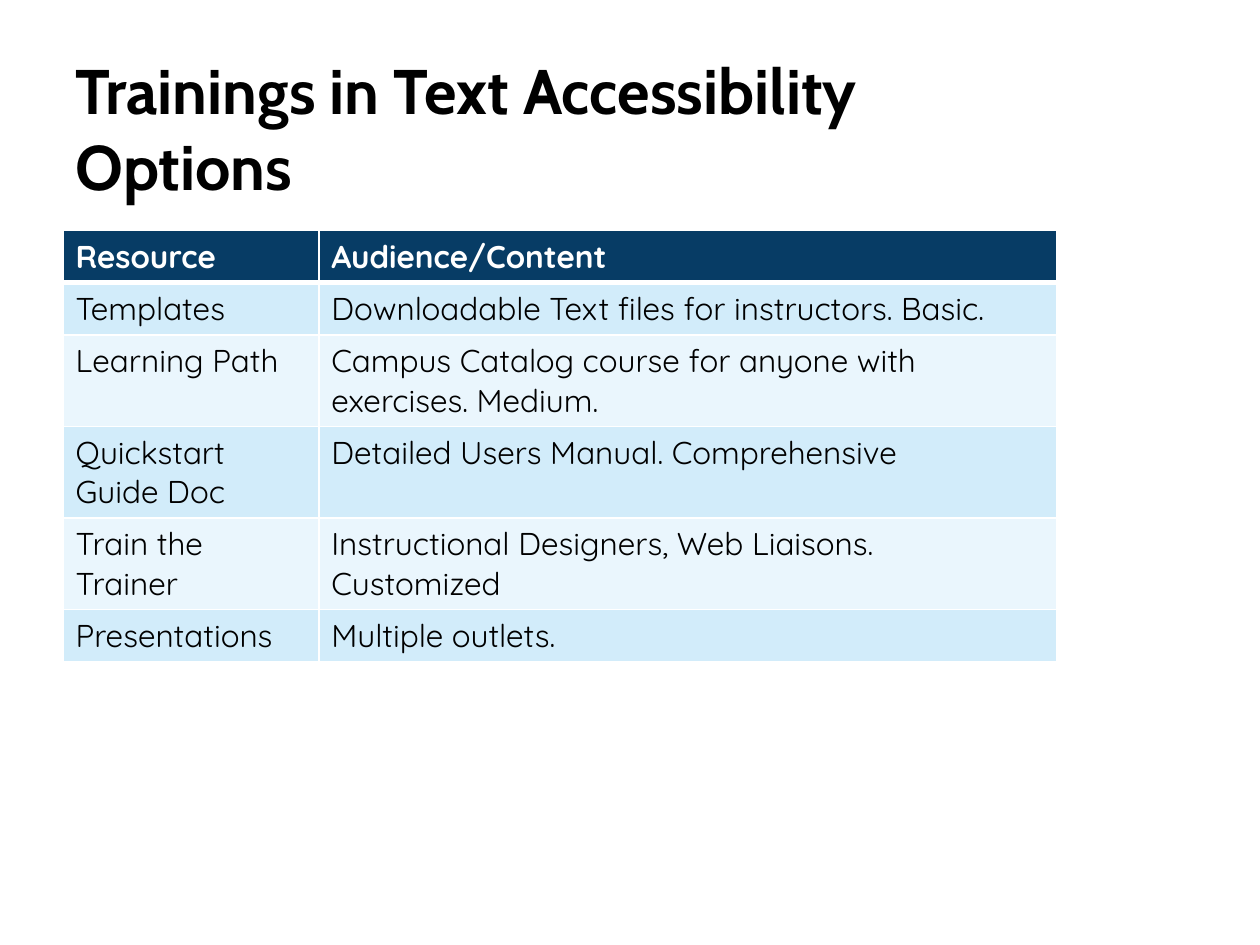
from dataclasses import dataclass

from lxml import etree
from pptx import Presentation
from pptx.dml.color import RGBColor
from pptx.enum import text
from pptx.oxml import ns
from pptx.util import Inches, Pt


@dataclass(frozen=True)
class Theme:
    head: str = "Cabin"
    body: str = "Quicksand"
    big: int = 36
    small: int = 18
    ink: str = "000000"
    white: str = "FFFFFF"
    navy: str = "073C65"
    bands: tuple = ("D2ECFA", "EAF6FD")
    thin: int = 1
    thick: int = 3


class Deck:
    def __init__(self, theme):
        self.theme = theme
        self.prs = Presentation()
        self.prs.slide_width, self.prs.slide_height = Inches(10), Inches(7.5)
        self.slide = self.prs.slides.add_slide(self.prs.slide_layouts[5])

    def style(self, para, face, size, color, bold):
        font = para.font
        font.name, font.size, font.bold = face, Pt(size), bold
        font.color.rgb = RGBColor.from_string(color)
        para.alignment = text.PP_ALIGN.LEFT

    def title(self, words, left, top, width, height):
        box = self.slide.shapes.title
        box.left, box.top = Inches(left), Inches(top)
        box.width, box.height = Inches(width), Inches(height)
        frame = box.text_frame
        frame.text = words
        frame.auto_size = text.MSO_AUTO_SIZE.NONE
        frame.vertical_anchor = text.MSO_ANCHOR.BOTTOM
        t = self.theme
        self.style(frame.paragraphs[0], t.head, t.big, t.ink, True)

    def border(self, cell, side, width):
        # Cell borders come before the fill in the cell properties
        props = cell._tc.get_or_add_tcPr()
        line = etree.SubElement(props, ns.qn(f"a:{side}"), w=str(Pt(width)))
        fill = etree.SubElement(line, ns.qn("a:solidFill"))
        etree.SubElement(fill, ns.qn("a:srgbClr"), val=self.theme.white)

    def cell(self, cell, words, fill, color, bold, above, below):
        t = self.theme
        cell.text = words
        self.style(cell.text_frame.paragraphs[0], t.body, t.small, color, bold)
        for side, width in (("lnL", t.thin), ("lnR", t.thin),
                            ("lnT", above), ("lnB", below)):
            self.border(cell, side, width)
        cell.fill.solid()
        cell.fill.fore_color.rgb = RGBColor.from_string(fill)

    def table(self, rows, left, top, cols, height):
        t = self.theme
        grid = self.slide.shapes.add_table(
            len(rows), len(cols), Inches(left), Inches(top),
            Inches(sum(cols)), Inches(height * len(rows))).table
        for col, width in zip(grid.columns, cols):
            col.width = Inches(width)
        for r, row in enumerate(rows):
            grid.rows[r].height = Inches(height)
            head = r == 0
            fill = t.navy if head else t.bands[(r - 1) % 2]
            color = t.white if head else t.ink
            above = t.thick if r == 1 else t.thin
            below = t.thick if head else t.thin
            for c, words in enumerate(row):
                self.cell(grid.cell(r, c), words, fill, color, head,
                          above, below)


ROWS = [
    ("Resource", "Audience/Content"),
    ("Templates", "Downloadable Text files for instructors. Basic."),
    ("Learning Path",
     "Campus Catalog course for anyone with exercises. Medium."),
    ("Quickstart Guide Doc", "Detailed Users Manual. Comprehensive"),
    ("Train the Trainer", "Instructional Designers, Web Liaisons. Customized"),
    ("Presentations", "Multiple outlets."),
]


def main():
    deck = Deck(Theme())
    # Heading
    deck.title("Trainings in Text Accessibility Options", 0.5, 0.41, 7.89, 1.25)
    # Training resources
    deck.table(ROWS, 0.5, 1.83, (2.03, 5.86), 0.41)
    deck.prs.save("out.pptx")


if __name__ == "__main__":
    main()
